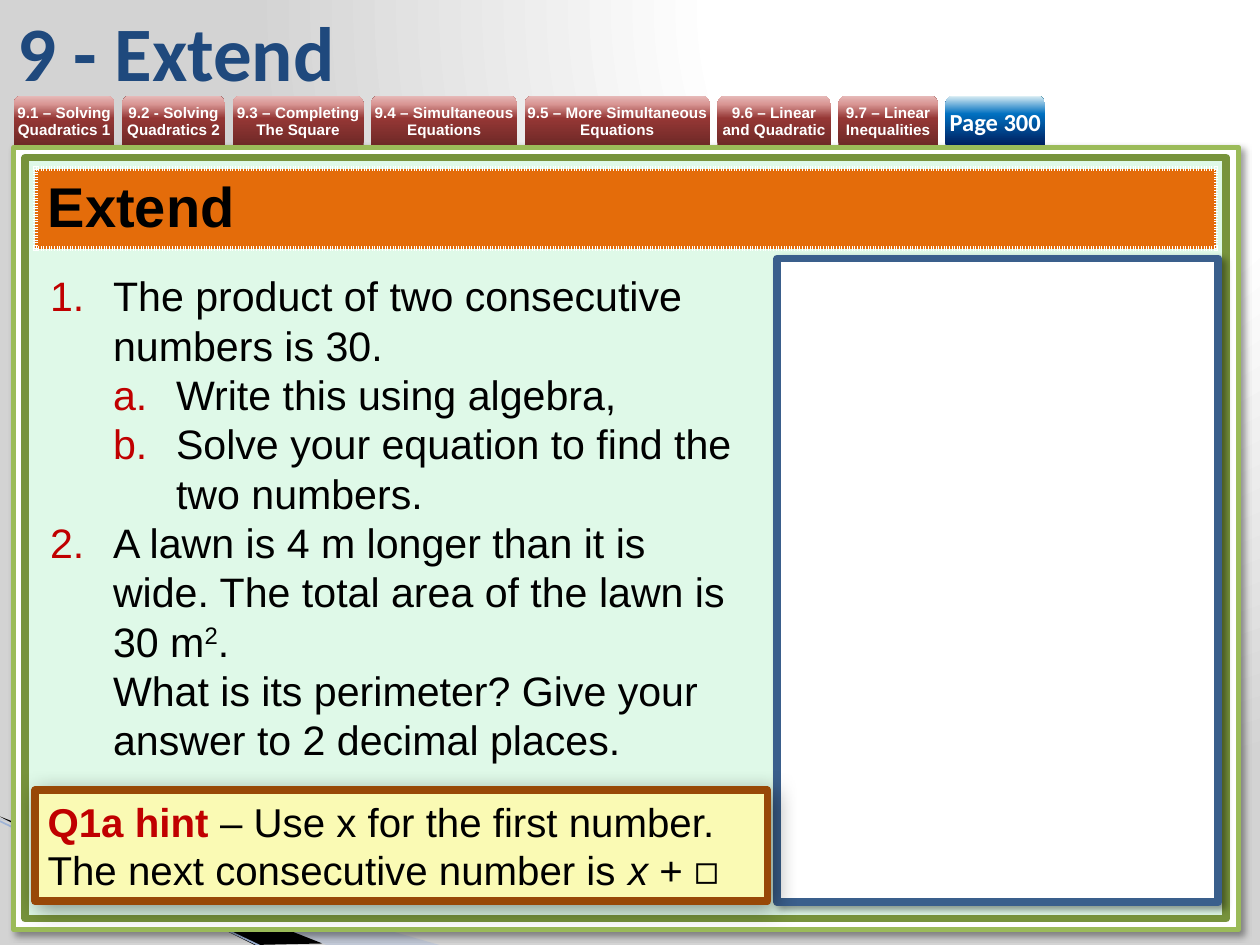
from lxml.etree import SubElement
from pptx import Presentation
from pptx.dml.color import RGBColor
from pptx.enum.shapes import MSO_CONNECTOR, MSO_SHAPE
from pptx.enum.text import MSO_ANCHOR, PP_ALIGN
from pptx.oxml import parse_xml
from pptx.oxml.ns import nsdecls, qn
from pptx.util import Cm, Pt

COLORS = {
    "white": "FFFFFF", "black": "000000", "red": "C00000", "navy": "1F497D",
    "frame": "9BBB59", "olive": "77933C", "mint": "DFF9E8", "blue": "3A5F8C",
    "orange": "E46C0A", "cream": "FAFAB4", "brown": "984807",
    "band": "A7B9DB", "stripe": "9EB3D6",
}
BACKDROP = [(0, "FFFFFF"), (40, "FFFFFF"), (100, "D3D3D3")]
MAROON = [(0, "6F2927"), (54, "953735"), (83, "D99694"), (100, "E6B9B8")]
OCEAN = [(0, "002060"), (63, "0070C0"), (100, "DBEEF4")]
UPWARD = '<a:lin ang="16200000" scaled="0"/>'
RADIAL = '<a:path path="circle"><a:fillToRect l="65000" b="98000"/></a:path>'

TABS = [
    ("9.1 – Solving Quadratics 1", 2.03), ("9.2 - Solving Quadratics 2", 2.08),
    ("9.3 – Completing The Square", 2.64), ("9.4 – Simultaneous Equations", 2.95),
    ("9.5 – More Simultaneous Equations", 3.73),
    ("9.6 – Linear and Quadratic", 2.29), ("9.7 – Linear Inequalities", 2.01),
    ("Page 300", 2.01),
]
TAB_LEFT, TAB_TOP, TAB_HEIGHT, TAB_GAP = 0.28, 1.93, 0.99, 0.15

QUESTIONS = [
    (0, [("The product of two consecutive numbers is 30.", {})]),
    (1, [("Write this using algebra,", {})]),
    (1, [("Solve your equation to find the two numbers.", {})]),
    (0, [("A lawn is 4 m longer than it is wide. The total area of the lawn is 30 m", {}),
         ("2", {"raised": True}),
         (".\nWhat is its perimeter? Give your answer to 2 decimal places.", {})]),
]
NUMBERING = ["arabicPeriod", "alphaLcPeriod"]
HINT = [
    ("Q1a hint ", {"bold": True, "color": "red"}),
    ("– Use x for the first number. The next consecutive number is ", {}),
    ("x ", {"italic": True}),
    ("+ ◻", {}),
]
WEDGES = [
    ([(-0.03, 16.51), (8.86, 19.05), (6.58, 19.05), (-0.03, 16.48)], "band", 40),
    ([(0, 16.46), (6.5, 19.02), (5.13, 19.05), (0.03, 16.48)], "black", 100),
]


def rgb(name):
    return RGBColor.from_string(COLORS[name])


def write(paragraph, text, size=23.5, font="Arial", color="black",
          bold=False, italic=False, raised=False):
    for index, part in enumerate(text.split("\n")):
        if index:
            paragraph.add_line_break()
        span = paragraph.add_run()
        span.text = part
        span.font.size = Pt(size)
        span.font.name = font
        span.font.bold = bold
        span.font.italic = italic
        span.font.color.rgb = rgb(color)
        if raised:
            span.font._element.set("baseline", "30000")


def gradient(stops, direction):
    marks = "".join(f'<a:gs pos="{place * 1000}"><a:srgbClr val="{color}"/></a:gs>'
                    for place, color in stops)
    return parse_xml(f'<a:gradFill {nsdecls("a")} rotWithShape="1">'
                     f"<a:gsLst>{marks}</a:gsLst>{direction}</a:gradFill>")


def add_panel(page, left, top, width, height, fill, line, weight, blur=0):
    panel = page.shapes.add_shape(MSO_SHAPE.RECTANGLE, Cm(left), Cm(top), Cm(width), Cm(height))
    panel.shadow.inherit = False
    panel.fill.solid()
    panel.fill.fore_color.rgb = rgb(fill)
    panel.line.color.rgb = rgb(line)
    panel.line.width = Pt(weight)
    if blur:
        effects = panel._element.spPr.find(qn("a:effectLst"))
        effects.append(parse_xml(
            f'<a:outerShdw {nsdecls("a")} blurRad="{Pt(blur)}" dist="{Pt(3)}" dir="2700000" '
            f'algn="tl" rotWithShape="0"><a:srgbClr val="{COLORS["black"]}">'
            '<a:alpha val="40000"/></a:srgbClr></a:outerShdw>'))
    return panel


def add_wedges(page):
    for points, color, opacity in WEDGES:
        corners = [(Cm(x), Cm(y)) for x, y in points]
        builder = page.shapes.build_freeform(*corners[0])
        builder.add_line_segments(corners[1:])
        wedge = builder.convert_to_shape()
        wedge.shadow.inherit = False
        wedge.fill.solid()
        wedge.fill.fore_color.rgb = rgb(color)
        wedge.line.fill.background()
        shade = wedge._element.spPr.find(qn("a:solidFill"))[0]
        SubElement(shade, qn("a:alpha")).set("val", str(opacity * 1000))
    stripe = page.shapes.add_connector(MSO_CONNECTOR.STRAIGHT, Cm(-0.03), Cm(16.54),
                                       Cm(5.31), Cm(19.1))
    stripe.line.color.rgb = rgb("stripe")
    stripe.line.width = Pt(0.95)
    SubElement(stripe._element.spPr, qn("a:effectLst"))


def add_tabs(page):
    left = TAB_LEFT
    for text, width in TABS:
        current = text == TABS[-1][0]
        tab = page.shapes.add_shape(MSO_SHAPE.ROUND_2_SAME_RECTANGLE, Cm(left), Cm(TAB_TOP),
                                    Cm(width), Cm(TAB_HEIGHT))
        tab.shadow.inherit = False
        tab.line.fill.background()
        tab._element.spPr.find(qn("a:prstGeom")).addnext(
            gradient(OCEAN if current else MAROON, UPWARD))
        frame = tab.text_frame
        frame.word_wrap = True
        frame.vertical_anchor = MSO_ANCHOR.MIDDLE
        frame.margin_left = frame.margin_right = frame.margin_top = frame.margin_bottom = 0
        paragraph = frame.paragraphs[0]
        paragraph.alignment = PP_ALIGN.CENTER
        if current:
            write(paragraph, text, size=14, font="Calibri", color="white", bold=True)
        else:
            paragraph.line_spacing = Pt(10)
            write(paragraph, text, size=8.7, color="white", bold=True)
        left += width + TAB_GAP


def add_text_box(page, left, top, width, height):
    frame = page.shapes.add_textbox(Cm(left), Cm(top), Cm(width), Cm(height)).text_frame
    frame.word_wrap = True
    return frame


def add_questions(page):
    frame = add_text_box(page, 0.76, 5.33, 14.55, 10.31)
    for index, (level, spans) in enumerate(QUESTIONS):
        paragraph = frame.add_paragraph() if index else frame.paragraphs[0]
        paragraph.level = level
        layout = paragraph._p.get_or_add_pPr()
        layout.set("marL", str(Cm(1.27 * (level + 1))))
        layout.set("indent", str(Cm(-1.27)))
        tint = SubElement(layout, qn("a:buClr"))
        SubElement(tint, qn("a:srgbClr")).set("val", COLORS["red"])
        SubElement(layout, qn("a:buFont")).set("typeface", "+mj-lt")
        SubElement(layout, qn("a:buAutoNum")).set("type", NUMBERING[level])
        stops = SubElement(layout, qn("a:tabLst"))
        for place in (2.39, 7.62):
            SubElement(stops, qn("a:tab"), pos=str(Cm(place)), algn="l")
        for text, style in spans:
            write(paragraph, text, **style)


def add_heading(page):
    table = page.shapes.add_table(1, 1, Cm(0.71), Cm(3.4), Cm(23.8), Cm(1.5)).table
    cell = table.cell(0, 0)
    cell.vertical_anchor = MSO_ANCHOR.MIDDLE
    write(cell.text_frame.paragraphs[0], "Extend", size=32, bold=True)
    properties = cell._tc.get_or_add_tcPr()
    for side in ("lnL", "lnR", "lnT", "lnB"):
        properties.append(parse_xml(
            f'<a:{side} {nsdecls("a")} w="{Pt(3)}"><a:solidFill>'
            f'<a:srgbClr val="{COLORS["white"]}"/></a:solidFill>'
            f'<a:prstDash val="sysDot"/></a:{side}>'))
    cell.fill.solid()
    cell.fill.fore_color.rgb = rgb("orange")


def main():
    deck = Presentation()
    deck.slide_width, deck.slide_height = Cm(25.4), Cm(19.05)
    page = deck.slides.add_slide(deck.slide_layouts[6])
    page.background.fill.solid()
    solid = page._element.cSld.bg.bgPr.find(qn("a:solidFill"))
    solid.getparent().replace(solid, gradient(BACKDROP, RADIAL))

    add_wedges(page)
    add_panel(page, 0.28, 2.97, 24.69, 15.77, "white", "frame", 3, blur=4)
    add_panel(page, 0.51, 3.18, 24.21, 15.34, "mint", "olive", 4.33)
    add_panel(page, 15.67, 5.21, 8.89, 12.98, "white", "blue", 4.33, blur=4)
    add_tabs(page)
    add_questions(page)

    title = add_text_box(page, 0.1, 0.13, 21, 1.8)
    title.vertical_anchor = MSO_ANCHOR.MIDDLE
    write(title.paragraphs[0], "9 - Extend", size=44, font="Calibri", color="navy", bold=True)

    add_heading(page)
    hint = add_panel(page, 0.71, 15.93, 14.76, 2.24, "cream", "brown", 4.33, blur=13).text_frame
    hint.word_wrap = True
    hint.vertical_anchor = MSO_ANCHOR.MIDDLE
    hint.paragraphs[0].alignment = PP_ALIGN.LEFT
    for text, style in HINT:
        write(hint.paragraphs[0], text, size=23, **style)
    deck.save("out.pptx")


if __name__ == "__main__":
    main()
